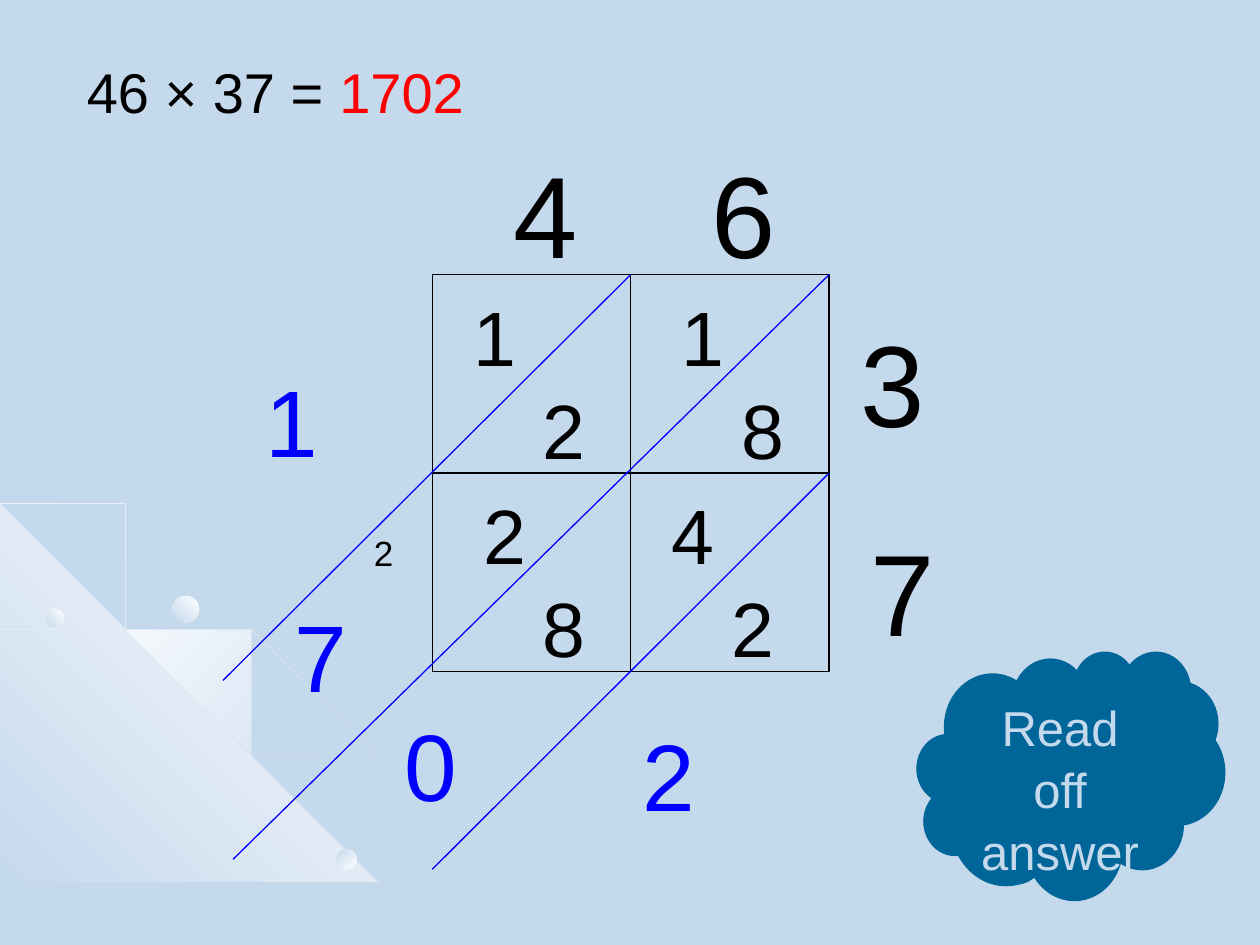
from lxml import etree
from pptx import Presentation
from pptx.dml.color import RGBColor
from pptx.enum import shapes as s, text as t
from pptx.oxml.ns import qn
from pptx.util import Inches, Pt

PALE = RGBColor(0xC5, 0xD9, 0xED)
WHITE = RGBColor(255, 255, 255)
BLACK = RGBColor(0, 0, 0)
RED = RGBColor(255, 0, 0)
BLUE = RGBColor(0, 0, 255)
TEAL = RGBColor(0, 0x66, 0x99)

# Backdrop: outlines of the arcs, the corner, and the beads (left, top, size, angle)
OUTER = [(0.57, 4.47), (0.28, 4.41), (0, 4.35), (0, 4.38), (0.28, 4.43),
         (0.56, 4.49), (0.97, 4.61), (1.35, 4.78), (1.73, 4.99), (2.08, 5.23),
         (2.41, 5.49), (2.71, 5.79), (2.98, 6.12), (3.23, 6.49), (3.37, 6.73),
         (3.5, 6.98), (3.6, 7.23), (3.7, 7.49), (3.72, 7.49), (3.62, 7.23),
         (3.52, 6.98), (3.39, 6.73), (3.25, 6.48), (3, 6.11), (2.72, 5.78),
         (2.42, 5.48), (2.09, 5.21), (1.74, 4.97), (1.36, 4.77), (0.98, 4.59)]
INNER = [(2.85, 7.14), (2.94, 7.32), (3.01, 7.49), (3.03, 7.49), (2.96, 7.3),
         (2.86, 7.12), (2.67, 6.76), (2.42, 6.4), (2.15, 6.06), (1.84, 5.76),
         (1.52, 5.49), (1.17, 5.26), (0.79, 5.05), (0.41, 4.88), (0, 4.75),
         (0, 4.77), (0.39, 4.9), (0.77, 5.07), (1.15, 5.28), (1.5, 5.51),
         (1.83, 5.78), (2.13, 6.08), (2.4, 6.42), (2.65, 6.77)]
MIDDLE = [(0, 4.42), (0, 4.44), (0.36, 4.57), (0.74, 4.75), (1.09, 4.94),
          (1.42, 5.18), (1.73, 5.44), (2.02, 5.75), (2.27, 6.05), (2.52, 6.41),
          (2.67, 6.67), (2.8, 6.94), (2.92, 7.22), (3.01, 7.49), (3.03, 7.49),
          (2.94, 7.2), (2.82, 6.93), (2.69, 6.65), (2.54, 6.39), (2.29, 6.03),
          (2.04, 5.73), (1.75, 5.43), (1.44, 5.16), (1.11, 4.93), (0.76, 4.73),
          (0.39, 4.55)]
CORNER = [(3.22, 7.49), (0, 7.49), (0, 4.27)]
# Gradient angles run counterclockwise
SWEEPS = [(OUTER, PALE, WHITE, 135), (CORNER, WHITE, PALE, 225),
          (INNER, PALE, WHITE, 135), (MIDDLE, PALE, WHITE, 135)]
BEADS = [(0.36, 4.83, 0.15, 225), (2.67, 6.74, 0.16, 135), (1.37, 4.73, 0.21, 225)]

# Lattice
LEFT, TOP, CELL = 3.43, 2.18, 1.575
MID_X, MID_Y = LEFT + CELL, TOP + CELL
END_X, END_Y = LEFT + 2 * CELL, TOP + 2 * CELL
LINES = [(MID_X, TOP, MID_X, END_Y, BLACK), (LEFT, MID_Y, END_X, MID_Y, BLACK),
         (MID_X, TOP, 1.77, 5.4, BLUE), (END_X, TOP, 1.85, 6.82, BLUE),
         (END_X, MID_Y, LEFT, 6.9, BLUE)]

# Digits by kind: size, colour, box width, box height, (digit, left, top)
LOW = 0.74  # drop from the upper to the lower digit of a cell
DIGITS = [
    (66, BLACK, 0.79, 1.2, [("4", 3.98, 0.99), ("6", 5.55, 0.99),
                            ("3", 6.73, 2.33), ("7", 6.81, 3.99)]),
    (44, BLACK, 0.79, 0.83, [("1", 5.31, TOP), ("8", 5.79, TOP + LOW),
                             ("4", 5.23, MID_Y), ("2", 5.71, MID_Y + LOW),
                             ("1", 3.66, TOP), ("2", 4.21, TOP + LOW),
                             ("2", 3.74, MID_Y), ("8", 4.21, MID_Y + LOW)]),
    (54, BLUE, 1.18, 1, [("2", 5, 5.56), ("0", 3.11, 5.48),
                         ("7", 2.24, 4.62), ("1", 2.01, 2.75)]),
    (20, BLACK, 0.47, 0.43, [("2", 2.87, 4.14)]),
]
SUM = [("46 × 37 = ", BLACK), ("1702", RED)]

prs = Presentation()
prs.slide_width, prs.slide_height = Inches(10), Inches(7.5)
page = prs.slides.add_slide(prs.slide_layouts[6])
page.background.fill.solid()
page.background.fill.fore_color.rgb = PALE
tree = page.shapes


def shade(shape, first, last, angle):
    shape.shadow.inherit = False
    shape.line.fill.background()
    shape.fill.gradient()
    shape.fill.gradient_angle = angle
    for stop, color, place in zip(shape.fill.gradient_stops, (first, last), (0, 1)):
        stop.color.rgb = color
        stop.position = place


def write(frame, runs, size, gap):
    par = frame.paragraphs[0]
    par.line_spacing = gap
    for words, color in runs:
        run = par.add_run()
        run.text = words
        run.font.name, run.font.size = "Arial", Pt(size)
        run.font.color.rgb = color
    return par


def label(runs, left, top, width, height, size):
    box = tree.add_textbox(Inches(left), Inches(top), Inches(width), Inches(height))
    box.text_frame.word_wrap = True
    write(box.text_frame, runs, size, 1.09)


def block(kind, left, top, width, height):
    shape = tree.add_shape(kind, Inches(left), Inches(top), Inches(width), Inches(height))
    shape.shadow.inherit = False
    return shape


# Backdrop
for points, first, last, angle in SWEEPS:
    pen = tree.build_freeform(*points[0], scale=Inches(1))
    pen.add_line_segments(points[1:], close=True)
    shade(pen.convert_to_shape(), first, last, angle)
for left, top, size, angle in BEADS:
    shade(block(s.MSO_SHAPE.OVAL, left, top, size, size), WHITE, PALE, angle)

# Sum
label(SUM, 0.59, 0.36, 3.31, 0.74, 32)

# Lattice frame and lines
grid = block(s.MSO_SHAPE.RECTANGLE, LEFT, TOP, 2 * CELL, 2 * CELL)
grid.fill.background()
grid.line.color.rgb, grid.line.width = BLACK, Pt(0.75)
for *ends, color in LINES:
    line = tree.add_connector(s.MSO_CONNECTOR.STRAIGHT, *map(Inches, ends))
    line.line.color.rgb, line.line.width = color, Pt(0.75)
    etree.SubElement(line._element.spPr, qn("a:effectLst"))

# Digits
for size, color, width, height, items in DIGITS:
    for digit, left, top in items:
        label([(digit, color)], left, top, width, height, size)

# Cloud
cloud = block(s.MSO_SHAPE.CLOUD_CALLOUT, 7.28, 5.17, 2.44, 1.97)
cloud.adjustments[0], cloud.adjustments[1] = -0.054, 0.111
cloud.fill.solid()
cloud.fill.fore_color.rgb = TEAL
cloud.line.color.rgb, cloud.line.width = TEAL, Pt(0.75)
cloud.text_frame.word_wrap = True
cloud.text_frame.vertical_anchor = t.MSO_ANCHOR.TOP
write(cloud.text_frame, [("Read off answer", PALE)], 28, 1.05).alignment = t.PP_ALIGN.CENTER

prs.save("out.pptx")
